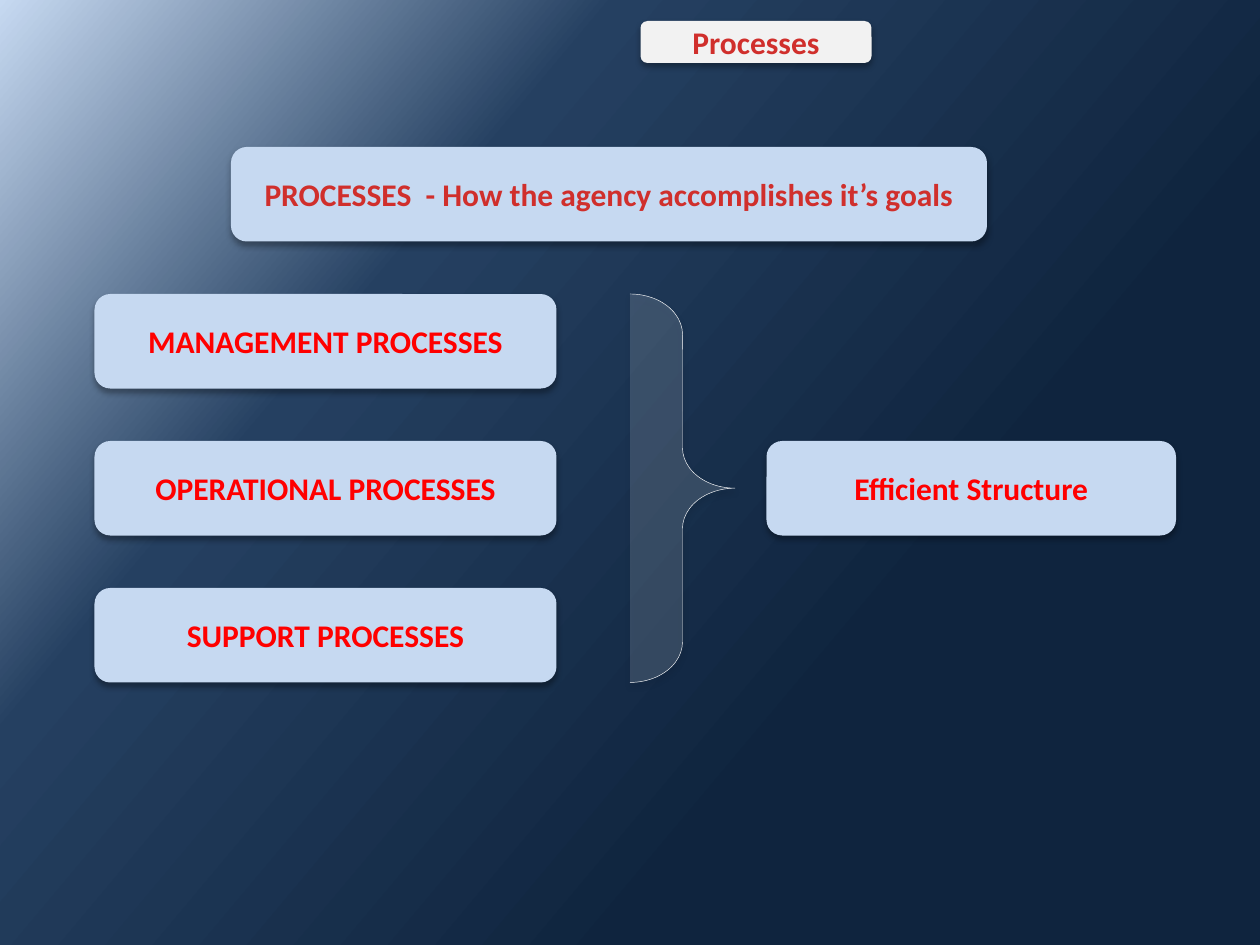
"""Build a slide showing how three kinds of process lead to an efficient structure."""
from dataclasses import dataclass

from pptx import Presentation
from pptx.dml.color import RGBColor
from pptx.enum.shapes import MSO_SHAPE as Shape
from pptx.enum.text import MSO_ANCHOR as Anchor, MSO_AUTO_SIZE as AutoSize, PP_ALIGN as Align
from pptx.oxml import parse_xml
from pptx.oxml.ns import nsdecls, qn
from pptx.util import Pt

TITLE = "Processes"
HEADLINE = "PROCESSES  - How the agency accomplishes it’s goals"
PROCESSES = ["MANAGEMENT PROCESSES", "OPERATIONAL PROCESSES", "SUPPORT PROCESSES"]
RESULT = "Efficient Structure"


@dataclass(frozen=True)
class Theme:
    font: str = "Calibri"
    size: int = 18
    box: str = "C6D9F1"
    title_box: str = "F2F2F2"
    heading: str = "D02F2C"
    label: str = "FF0000"
    brace: str = "DCE6F2"
    brace_opacity: int = 17
    brace_line: str = "FFFFFF"
    backdrop: tuple = ((0, "C6D9F1"), (30, "254061"), (69, "0F243E"), (100, "0F243E"))
    backdrop_angle: int = 40


THEME = Theme()
TITLE_AREA = (366, 12, 132, 24)
HEADLINE_AREA = (132, 84, 432, 54)
COLUMN_LEFT, COLUMN_WIDTH = 54, 264
FIRST_ROW, ROW_PITCH, ROW_HEIGHT = 168, 84, 54
BRACE_LEFT, BRACE_WIDTH = 360, 60
RESULT_LEFT, RESULT_WIDTH = 438, 234


def paint_backdrop(slide):
    fill = slide.background.fill
    fill.gradient()
    fill.gradient_angle = 360 - THEME.backdrop_angle
    stops = slide.element.find(".//" + qn("a:gsLst"))
    for stop in list(stops):
        stops.remove(stop)
    for position, color in THEME.backdrop:
        stops.append(parse_xml(
            f'<a:gs {nsdecls("a")} pos="{position * 1000}"><a:srgbClr val="{color}"/></a:gs>'))


def add_shadow(shape):
    shape.shadow.inherit = False
    effects = shape.element.spPr.find(qn("a:effectLst"))
    effects.append(parse_xml(
        f'<a:outerShdw {nsdecls("a")} blurRad="{Pt(3.5)}" dist="{Pt(2.2)}" dir="5400000" '
        'algn="t" rotWithShape="0"><a:srgbClr val="000000"><a:alpha val="32000"/>'
        '</a:srgbClr></a:outerShdw>'))


def add_panel(slide, kind, area, color):
    shape = slide.shapes.add_shape(kind, *map(Pt, area))
    shape.fill.solid()
    shape.fill.fore_color.rgb = RGBColor.from_string(color)
    shape.line.fill.background()
    add_shadow(shape)
    return shape


def write_text(shape, text, *, color, margin=7.2):
    frame = shape.text_frame
    frame.text = text
    frame.word_wrap = True
    frame.auto_size = AutoSize.NONE
    frame.vertical_anchor = Anchor.MIDDLE
    frame.margin_left = frame.margin_right = Pt(margin)
    frame.margin_top = frame.margin_bottom = Pt(margin / 2)
    paragraph = frame.paragraphs[0]
    paragraph.alignment = Align.CENTER
    font = paragraph.runs[0].font
    font.name, font.size, font.bold = THEME.font, Pt(THEME.size), True
    font.color.rgb = RGBColor.from_string(color)


def add_title(slide):
    add_panel(slide, Shape.ROUNDED_RECTANGLE, TITLE_AREA, THEME.title_box)
    title = slide.shapes.title
    title.left, title.top, title.width, title.height = map(Pt, TITLE_AREA)
    write_text(title, TITLE, color=THEME.heading, margin=0)
    slide.shapes[-1].element.addnext(title.element)


def add_brace(slide, area):
    brace = add_panel(slide, Shape.RIGHT_BRACE, area, THEME.brace)
    brace.adjustments[0], brace.adjustments[1] = 0.386, 0.5
    color = brace.element.spPr.find(qn("a:solidFill"))[0]
    color.append(parse_xml(
        f'<a:alpha {nsdecls("a")} val="{THEME.brace_opacity * 1000}"/>'))
    brace.line.color.rgb = RGBColor.from_string(THEME.brace_line)
    brace.line.width = Pt(0.25)


def main():
    presentation = Presentation()
    presentation.slide_width, presentation.slide_height = Pt(720), Pt(540)
    slide = presentation.slides.add_slide(presentation.slide_layouts[5])
    paint_backdrop(slide)

    rows = [FIRST_ROW + index * ROW_PITCH for index in range(len(PROCESSES))]
    span = rows[-1] + ROW_HEIGHT - FIRST_ROW
    result_top = FIRST_ROW + (span - ROW_HEIGHT) / 2
    boxes = [(HEADLINE, HEADLINE_AREA, THEME.heading)]
    boxes += [(text, (COLUMN_LEFT, top, COLUMN_WIDTH, ROW_HEIGHT), THEME.label)
              for text, top in zip(PROCESSES, rows)]
    boxes.append((RESULT, (RESULT_LEFT, result_top, RESULT_WIDTH, ROW_HEIGHT), THEME.label))
    for text, area, color in boxes:
        box = add_panel(slide, Shape.ROUNDED_RECTANGLE, area, THEME.box)
        write_text(box, text, color=color)

    add_brace(slide, (BRACE_LEFT, FIRST_ROW, BRACE_WIDTH, span))
    add_title(slide)
    presentation.save("out.pptx")


if __name__ == "__main__":
    main()
